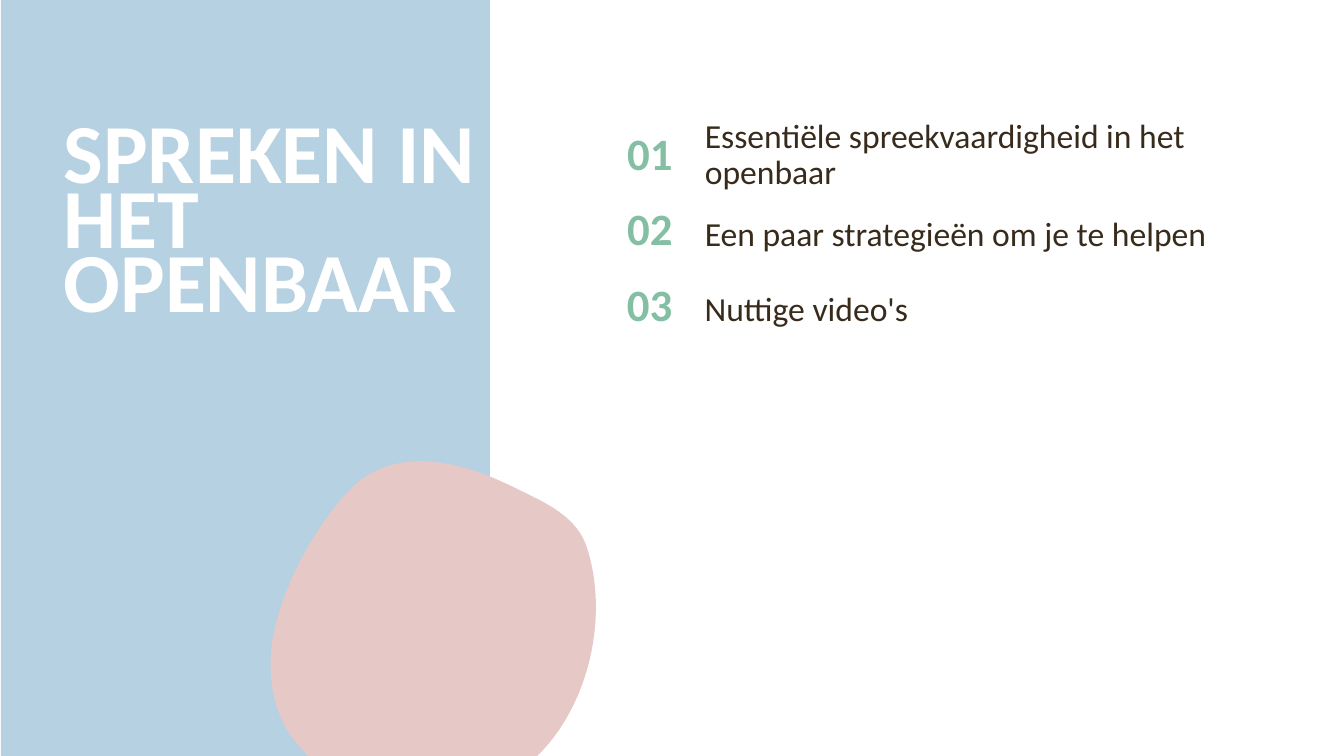
from dataclasses import dataclass

from lxml import etree
from pptx import Presentation
from pptx.dml.color import RGBColor
from pptx.enum.shapes import MSO_SHAPE
from pptx.enum.text import MSO_ANCHOR, MSO_AUTO_SIZE, PP_ALIGN
from pptx.oxml.ns import qn
from pptx.util import Inches, Pt

RECTANGLE = MSO_SHAPE.RECTANGLE
TOP, MIDDLE = MSO_ANCHOR.TOP, MSO_ANCHOR.MIDDLE
LEFT = PP_ALIGN.LEFT
NO_FIT = MSO_AUTO_SIZE.NONE

FONT = "Calibri"
BLUE, PINK, GREEN = "B6D1E1", "E6C8C7", "84BFA4"
WHITE, BROWN = "FFFFFF", "382B1B"

ROW_TOP, ROW_HEIGHT = 1.17, 0.75
NUMBER_LEFT, NUMBER_WIDTH = 6.12, 0.77
TOPIC_LEFT, TOPIC_WIDTH = 6.89, 5.25

Point = tuple[float, float]


@dataclass(frozen=True)
class TextStyle:
    size: float
    color: str
    bold: bool = False
    line_spacing: float = 0.9
    space_after: float = 0
    anchor: MSO_ANCHOR = MIDDLE


@dataclass(frozen=True)
class Topic:
    text: str
    style: TextStyle


TITLE = TextStyle(60, WHITE, True, Pt(46), anchor=TOP)
NUMBER = TextStyle(32, GREEN, True)
LONG_TOPIC = TextStyle(24, BROWN)
SHORT_TOPIC = TextStyle(24, BROWN, line_spacing=1.07, space_after=8)

TOPICS = [
    Topic("Essentiële spreekvaardigheid in het openbaar", LONG_TOPIC),
    Topic("Een paar strategieën om je te helpen", SHORT_TOPIC),
    Topic("Nuttige video's", SHORT_TOPIC),
]

BLOB_BOX = (2.69, 4.58, 3.22, 3.32)
BLOB_START = (4.64, 4.65)
BLOB_CURVES = [
    ((4.21, 4.53), (3.76, 4.52), (3.42, 4.91)),
    ((3.09, 5.28), (2.77, 5.88), (2.7, 6.37)),
    ((2.54, 7.53), (3.57, 8.03), (4.61, 7.87)),
    ((5.62, 7.71), (6.13, 6.38), (5.82, 5.43)),
    ((5.73, 5.15), (5.46, 5.01), (5.21, 4.89)),
    ((5.03, 4.8), (4.84, 4.71), (4.64, 4.65)),
]


def rgb(color: str) -> RGBColor:
    return RGBColor.from_string(color)


def paint(sp, color: str) -> None:
    sp.shadow.inherit = False
    sp.fill.solid()
    sp.fill.fore_color.rgb = rgb(color)
    sp.line.fill.background()


def write(sp, box: tuple[float, float, float, float], text: str,
          style: TextStyle) -> None:
    sp.left, sp.top, sp.width, sp.height = map(Inches, box)
    tf = sp.text_frame
    tf.word_wrap = True
    tf.auto_size = NO_FIT
    tf.vertical_anchor = style.anchor
    p = tf.paragraphs[0]
    pPr = p._p.get_or_add_pPr()
    pPr.set("marL", "0")
    pPr.set("indent", "0")
    etree.SubElement(pPr, qn("a:buNone"))
    p.alignment = LEFT
    p.line_spacing = style.line_spacing
    p.space_before = Pt(0)
    p.space_after = Pt(style.space_after)
    r = p.add_run()
    r.text = text
    r.font.name = FONT
    r.font.size = Pt(style.size)
    r.font.bold = style.bold
    r.font.color.rgb = rgb(style.color)


def add_segment(outline, tag: str, points: list[Point]) -> None:
    left, top = BLOB_BOX[:2]
    segment = etree.SubElement(outline, qn(tag))
    for x, y in points:
        etree.SubElement(segment, qn("a:pt"),
                         x=str(Inches(x - left)), y=str(Inches(y - top)))


def add_blob(s) -> None:
    left, top, width, height = map(Inches, BLOB_BOX)
    right, bottom = left + width, top + height
    builder = s.shapes.build_freeform(left, top)
    builder.add_line_segments([(right, top), (right, bottom), (left, bottom)])
    sp = builder.convert_to_shape()
    outline = next(sp.element.iter(qn("a:path")))
    for segment in list(outline):
        outline.remove(segment)
    add_segment(outline, "a:moveTo", [BLOB_START])
    for curve in BLOB_CURVES:
        add_segment(outline, "a:cubicBezTo", curve)
    etree.SubElement(outline, qn("a:close"))
    paint(sp, PINK)


def main() -> None:
    prs = Presentation()
    prs.slide_width, prs.slide_height = Inches(13.33), Inches(7.5)
    s = prs.slides.add_slide(prs.slide_layouts.get_by_name("Comparison"))
    title, *bodies = s.placeholders

    panel = s.shapes.add_shape(RECTANGLE, Inches(0.01), 0, Inches(4.85), Inches(7.5))
    paint(panel, BLUE)
    title.element.addprevious(panel.element)

    write(title, (0.53, 1.3, 5.33, 0.76), "SPREKEN IN HET OPENBAAR", TITLE)
    add_blob(s)

    extra = [s.shapes.add_textbox(0, 0, 0, 0)
             for _ in range(2 * len(TOPICS) - len(bodies))]
    boxes = iter(bodies + extra)
    for i, topic in enumerate(TOPICS):
        top = ROW_TOP + i * ROW_HEIGHT
        write(next(boxes), (NUMBER_LEFT, top, NUMBER_WIDTH, ROW_HEIGHT),
              f"{i + 1:02}", NUMBER)
        write(next(boxes), (TOPIC_LEFT, top, TOPIC_WIDTH, ROW_HEIGHT),
              topic.text, topic.style)

    prs.save("out.pptx")


if __name__ == "__main__":
    main()
